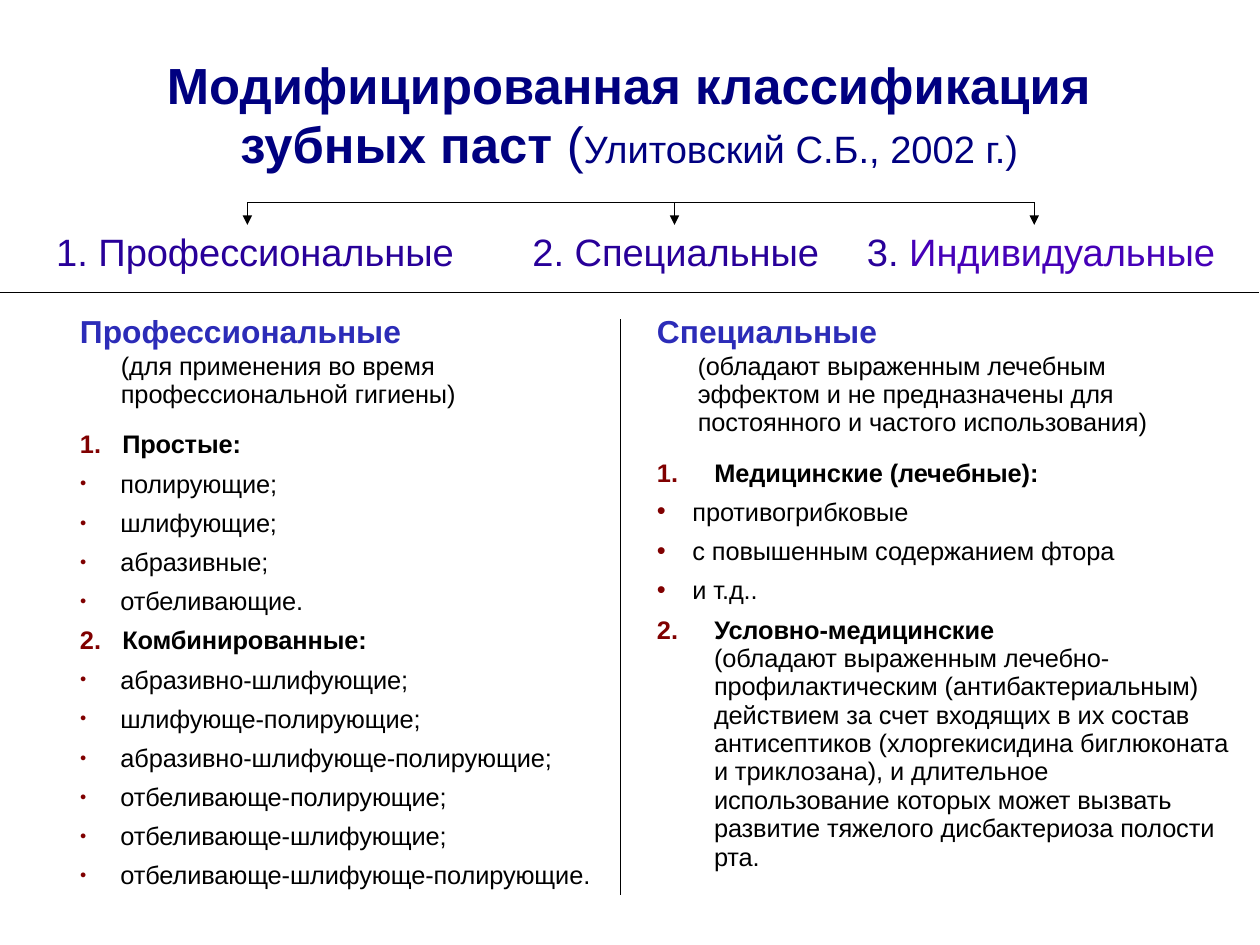
from lxml import etree
from pptx import Presentation
from pptx import util as u
from pptx.dml.color import RGBColor
from pptx.enum import shapes, text
from pptx.oxml.ns import qn

BLACK, NAVY, BLUE, MAROON = "000000", "000080", "2C2CB8", "800000"
INDIGO, VIOLET = "280099", "4600B8"


def color(value):
    return RGBColor.from_string(value)


def add_span(para, words, size=16, ink=BLACK, bold=False, tight=True):
    """Add a run; tight narrows the letter spacing slightly."""
    span = para.add_run()
    span.text = words
    span.font.name = "Arial"
    span.font.size = u.Pt(size)
    span.font.bold = bold
    span.font.color.rgb = color(ink)
    if tight:
        span.font._element.set("spc", "-5")


class Slide:
    def __init__(self, deck):
        self.page = deck.slides.add_slide(deck.slide_layouts[6])
        self.line_color = BLACK
        self.line_width = u.Pt(0.75)

    def box(self, left, top, width, height, inset_top=0):
        box = self.page.shapes.add_textbox(u.Cm(left), u.Cm(top), u.Cm(width), u.Cm(height))
        frame = box.text_frame
        frame.word_wrap = True
        frame.margin_left = frame.margin_right = frame.margin_bottom = 0
        frame.margin_top = u.Cm(inset_top)
        return frame

    def para(self, frame, line=None, before=0, margin=0.03, hang=0, bullet=None,
             bullet_size=100, number=None, align=text.PP_ALIGN.LEFT):
        """Add a paragraph, bulleted or numbered; margin and hang are in centimetres."""
        first = frame.paragraphs[0]
        para = frame.add_paragraph() if first.runs else first
        props = para._p.get_or_add_pPr()
        props.set("marL", str(u.Cm(margin)))
        props.set("indent", str(-u.Cm(hang)))
        if bullet or number:
            ink = etree.SubElement(props, qn("a:buClr"))
            etree.SubElement(ink, qn("a:srgbClr"), val=MAROON)
            etree.SubElement(props, qn("a:buSzPct"), val=str(bullet_size * 1000))
            etree.SubElement(props, qn("a:buFont"), typeface="Arial")
        if bullet:
            etree.SubElement(props, qn("a:buChar"), char=bullet)
        elif number:
            etree.SubElement(props, qn("a:buAutoNum"), type="arabicPeriod", startAt=str(number))
        else:
            etree.SubElement(props, qn("a:buNone"))
        para.alignment = align
        para.space_before = u.Pt(before)
        if line:
            para.line_spacing = u.Pt(line)
        return para

    def heading(self, left, width, height, name, spans):
        frame = self.box(left, 6.96, width, height)
        add_span(self.para(frame, line=23.4), name, size=20, ink=BLUE, bold=True, tight=False)
        note = self.para(frame, line=17.9, before=1.1, margin=0.94)
        for words, size in spans:
            add_span(note, words, size=size)

    def groups(self, frame, groups, title_margin, margin, bullet, bullet_size=100):
        """Fill a frame with numbered titles, each followed by its bullets."""
        for number, (name, items) in enumerate(groups, 1):
            title = self.para(frame, before=5.5 if number > 1 else 0, margin=title_margin,
                              hang=title_margin - 0.03, number=number)
            add_span(title, name, bold=True)
            for item in items:
                para = self.para(frame, before=5.5, margin=margin, hang=margin - 0.03,
                                 bullet=bullet, bullet_size=bullet_size)
                add_span(para, item)

    def line(self, x1, y1, x2, y2, arrow=False):
        line = self.page.shapes.add_connector(
            shapes.MSO_CONNECTOR.STRAIGHT, u.Cm(x1), u.Cm(y1), u.Cm(x2), u.Cm(y2))
        line.line.color.rgb = color(self.line_color)
        line.line.width = self.line_width
        if arrow:
            etree.SubElement(line.line._get_or_add_ln(), qn("a:tailEnd"), type="triangle")
        etree.SubElement(line._element.spPr, qn("a:effectLst"))


def main():
    deck = Presentation()
    deck.slide_width, deck.slide_height = u.Cm(28.02), u.Cm(21.01)
    slide = Slide(deck)

    title = slide.box(1.65, 1.07, 24.69, 2.97, inset_top=0.18)
    center = text.PP_ALIGN.CENTER
    top_line = slide.para(title, line=37, margin=0, align=center)
    add_span(top_line, "Модифицированная классификация", size=32, ink=NAVY, bold=True, tight=False)
    low_line = slide.para(title, line=37, margin=0, align=center)
    add_span(low_line, "зубных паст ", size=32, ink=NAVY, bold=True, tight=False)
    add_span(low_line, "(", size=32, ink=NAVY, tight=False)
    add_span(low_line, "Улитовский С.Б., 2002 г.)", size=24, ink=NAVY, tight=False)

    slide.heading(1.75, 8.48, 2.13, "Профессиональные", [
        ("(для применения во время профессиональной гигиены)", 16)])
    slide.groups(slide.box(1.75, 9.53, 11.58, 9.96), [
        ("Простые:", ["полирующие;", "шлифующие;", "абразивные;", "отбеливающие."]),
        ("Комбинированные:", [
            "абразивно-шлифующие;",
            "шлифующе-полирующие;",
            "абразивно-шлифующе-полирующие;",
            "отбеливающе-полирующие;",
            "отбеливающе-шлифующие;",
            "отбеливающе-шлифующе-полирующие."]),
    ], title_margin=0.97, margin=0.93, bullet="●", bullet_size=44)

    slide.heading(14.58, 11.13, 2.77, "Специальные", [
        ("(", 15),
        ("обладают выраженным лечебным эффектом и не предназначены для "
         "постоянного и частого использования)", 16)])
    special = slide.box(14.58, 10.16, 12.93, 9.12)
    slide.groups(special, [
        ("Медицинские (лечебные):", [
            "противогрибковые", "с повышенным содержанием фтора", "и т.д.."]),
        ("Условно-медицинские", []),
    ], title_margin=1.31, margin=0.82, bullet="•")
    details = slide.para(special, line=17.9, margin=1.3)
    add_span(details,
             "(обладают выраженным лечебно-профилактическим (антибактериальным) "
             "действием за счет входящих в их состав антисептиков (хлоргекисидина "
             "биглюконата и триклозана), и длительное")
    details.add_line_break()
    add_span(details, "использование которых может вызвать развитие тяжелого "
                      "дисбактериоза полости рта.")

    for left, width, number, name, ink in [
            (1.22, 9.6, "1. ", "Профессиональные", INDIGO),
            (11.81, 6.9, "2. ", "Специальные", INDIGO),
            (19.25, 8.4, "3. ", "Индивидуальные", VIOLET)]:
        label = slide.para(slide.box(left, 5.08, width, 1.02))
        add_span(label, number, size=24, ink=INDIGO, tight=False)
        add_span(label, name, size=24, ink=ink)

    branches = [5.5, 15, 23]
    slide.line(branches[0], 4.5, branches[-1], 4.5)
    for x in branches:
        slide.line(x, 4.5, x, 5, arrow=True)
    slide.line(0, 6.5, 28, 6.5)
    slide.line(13.8, 7.1, 13.8, 19.9)

    deck.save("out.pptx")


if __name__ == "__main__":
    main()
